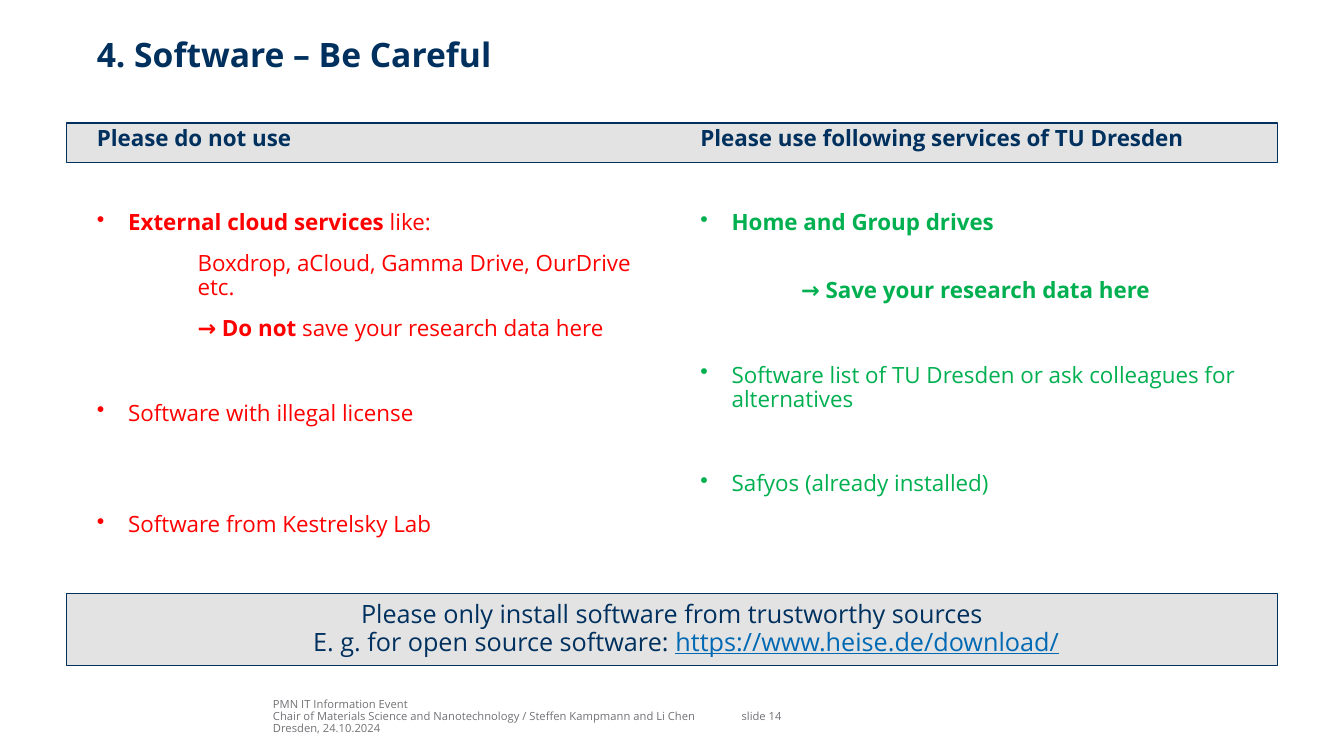
from lxml import etree
from pptx import Presentation
from pptx.dml.color import RGBColor
from pptx.enum.shapes import MSO_SHAPE
from pptx.enum.text import MSO_ANCHOR, PP_ALIGN
from pptx.oxml.ns import qn
from pptx.util import Cm, Pt

RECTANGLE = MSO_SHAPE.RECTANGLE
TOP, MIDDLE = MSO_ANCHOR.TOP, MSO_ANCHOR.MIDDLE
LEFT, CENTER = PP_ALIGN.LEFT, PP_ALIGN.CENTER

FONT = "Open Sans"
COLORS = {"navy": "00305D", "grey": "727277", "panel": "E3E3E4",
          "avoid": "FF0000", "use": "00B050", "address": "0069B4"}

# Space before a paragraph, in points
CLOSE, HALF_GAP, GAP, WIDE_GAP = 12, 31.5, 43, 62.5

# Runs are (text, bold); paragraphs are (kind, space before, runs)
TITLE = "4. Software – Be Careful"
COLUMNS = [
    {"left": 2.44, "width": 14.5, "color": "avoid",
     "heading": "Please do not use",
     "items": [
         ("bullet", GAP, [("External cloud services ", True), ("like:", False)]),
         ("detail", CLOSE, [("Boxdrop, aCloud, Gamma Drive, OurDrive etc.", False)]),
         ("detail", CLOSE, [("→ Do not ", True), ("save your research data here", False)]),
         ("bullet", GAP, [("Software with illegal license", False)]),
         ("bullet", WIDE_GAP, [("Software from Kestrelsky Lab", False)]),
     ]},
    {"left": 17.65, "width": 15.93, "color": "use",
     "heading": "Please use following services of TU Dresden",
     "items": [
         ("bullet", GAP, [("Home and Group drives", True)]),
         ("detail", HALF_GAP, [("→ Save your research data here", True)]),
         ("bullet", GAP, [("Software list of TU Dresden or ask colleagues for alternatives", False)]),
         ("bullet", GAP, [("Safyos (already installed)", False)]),
     ]},
]
ADVICE = "Please only install software from trustworthy sources"
EXAMPLE = "E. g. for open source software: "
ADDRESS = "https://www.heise.de/download/"
FOOTER = ["PMN IT Information Event",
          "Chair of Materials Science and Nanotechnology / Steffen Kampmann and Li Chen",
          "Dresden, 24.10.2024"]
SLIDE_NUMBER = "slide 14"

BULLET_INDENT, DETAIL_INDENT, EXAMPLE_INDENT = 0.79, 2.54, 0.71
PANEL_LEFT, PANEL_WIDTH = 1.68, 30.51
FOOTER_TOP, FOOTER_HEIGHT = 17.55, 1.02


def add_panel(slide, top, height, line_width):
    panel = slide.shapes.add_shape(RECTANGLE, Cm(PANEL_LEFT), Cm(top),
                                   Cm(PANEL_WIDTH), Cm(height))
    panel.shadow.inherit = False
    panel.fill.solid()
    panel.fill.fore_color.rgb = RGBColor.from_string(COLORS["panel"])
    panel.line.color.rgb = RGBColor.from_string(COLORS["navy"])
    panel.line.width = Pt(line_width)
    return panel


def add_text_area(slide, left, top, width, height, anchor=TOP):
    frame = slide.shapes.add_textbox(Cm(left), Cm(top), Cm(width), Cm(height)).text_frame
    frame.word_wrap = True
    frame.vertical_anchor = anchor
    frame.margin_left = frame.margin_right = frame.margin_top = frame.margin_bottom = 0
    return frame


def add_paragraph(frame, space=0, indent=0, bullet=False, align=LEFT):
    """Use the frame's empty first paragraph, or append another one."""
    first = frame.paragraphs[0]
    paragraph = frame.add_paragraph() if first.runs else first
    if indent:
        properties = paragraph._p.get_or_add_pPr()
        properties.set("marL", str(Cm(indent)))
        properties.set("indent", str(-Cm(indent) if bullet else 0))
        if bullet:
            etree.SubElement(properties, qn("a:buChar")).set("char", "•")
    paragraph.alignment = align
    paragraph.line_spacing = 0.9
    paragraph.space_before = Pt(space)
    return paragraph


def add_run(paragraph, text, size, color, bold=False, underline=False):
    run = paragraph.add_run()
    run.text = text
    run.font.name = FONT
    run.font.size = Pt(size)
    run.font.bold = bold
    run.font.underline = underline
    run.font.color.rgb = RGBColor.from_string(COLORS[color])


def add_column(slide, column):
    frame = add_text_area(slide, column["left"], 3.2, column["width"], 12.07)
    add_run(add_paragraph(frame), column["heading"], 16, "navy", bold=True)
    for kind, space, runs in column["items"]:
        bullet = kind == "bullet"
        indent = BULLET_INDENT if bullet else DETAIL_INDENT
        paragraph = add_paragraph(frame, space, indent, bullet)
        for text, bold in runs:
            add_run(paragraph, text, 16, column["color"], bold)


def add_advice(slide):
    frame = add_panel(slide, 14.96, 1.8, 0.75).text_frame
    frame.word_wrap = True
    frame.vertical_anchor = MIDDLE
    add_run(add_paragraph(frame, align=CENTER), ADVICE, 18, "navy")
    example = add_paragraph(frame, indent=EXAMPLE_INDENT, align=CENTER)
    add_run(example, EXAMPLE, 18, "navy")
    add_run(example, ADDRESS, 18, "address", underline=True)


def add_footer(slide):
    for left, width, lines in [(6.88, 11.6, FOOTER), (18.69, 1.96, [SLIDE_NUMBER])]:
        frame = add_text_area(slide, left, FOOTER_TOP, width, FOOTER_HEIGHT, MIDDLE)
        for line in lines:
            add_run(add_paragraph(frame), line, 8, "grey")


def main():
    presentation = Presentation()
    presentation.slide_width, presentation.slide_height = Cm(33.87), Cm(19.05)
    slide = presentation.slides.add_slide(presentation.slide_layouts[6])

    title = add_text_area(slide, 2.44, 0.97, 29.39, 1.9)
    add_run(add_paragraph(title), TITLE, 24, "navy", bold=True)
    add_panel(slide, 3.1, 1, 1)
    for column in COLUMNS:
        add_column(slide, column)
    add_advice(slide)
    add_footer(slide)
    presentation.save("out.pptx")


if __name__ == "__main__":
    main()
